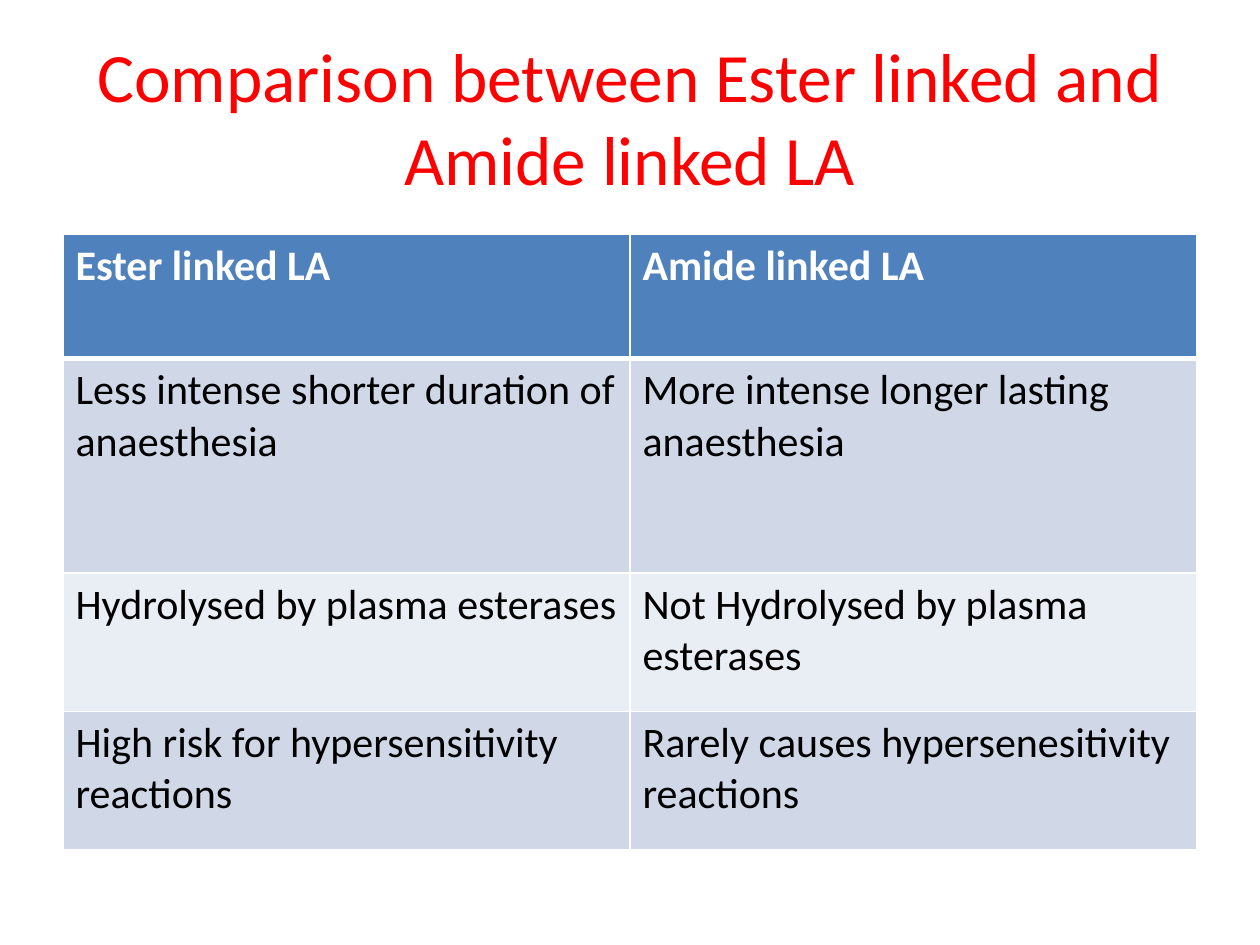
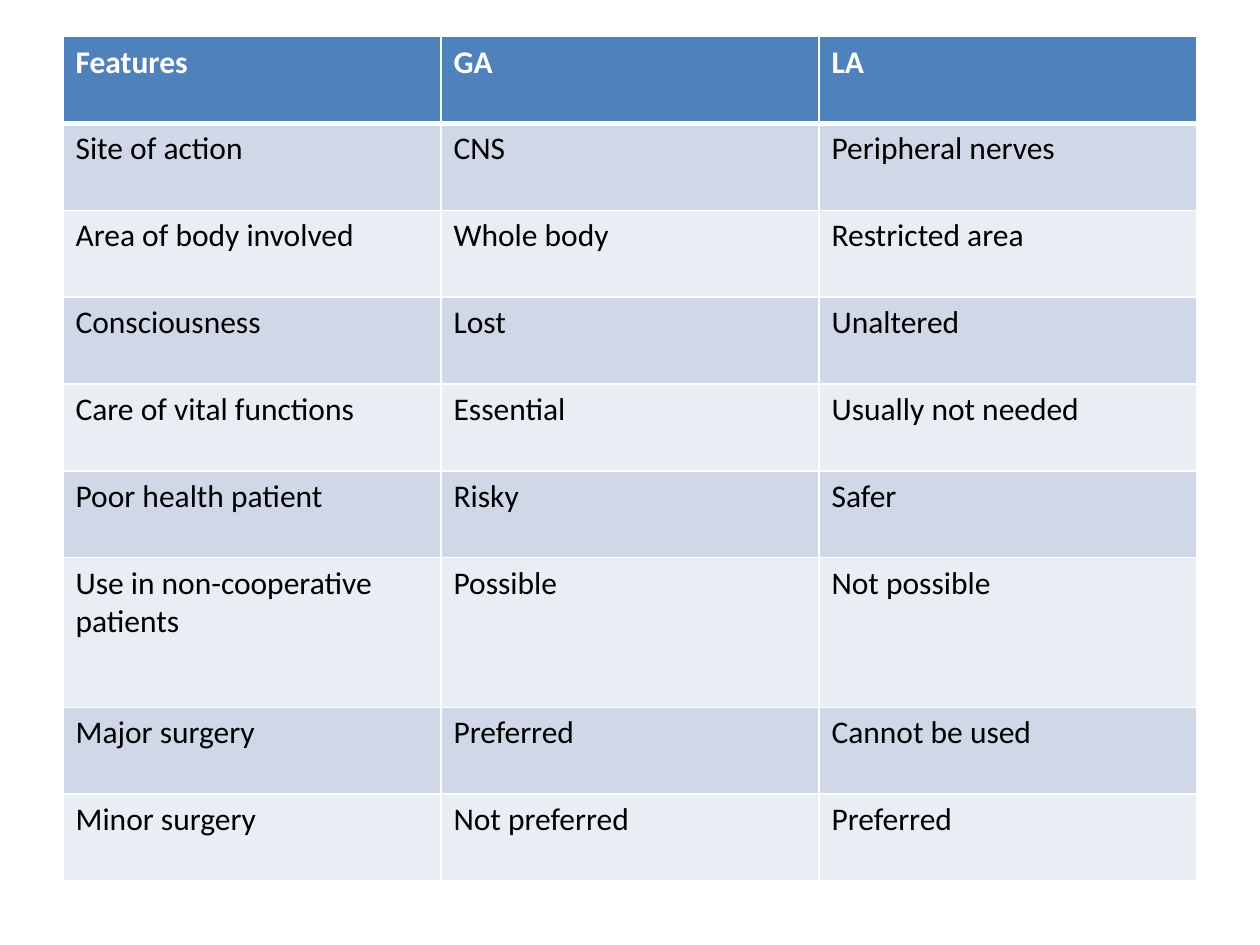
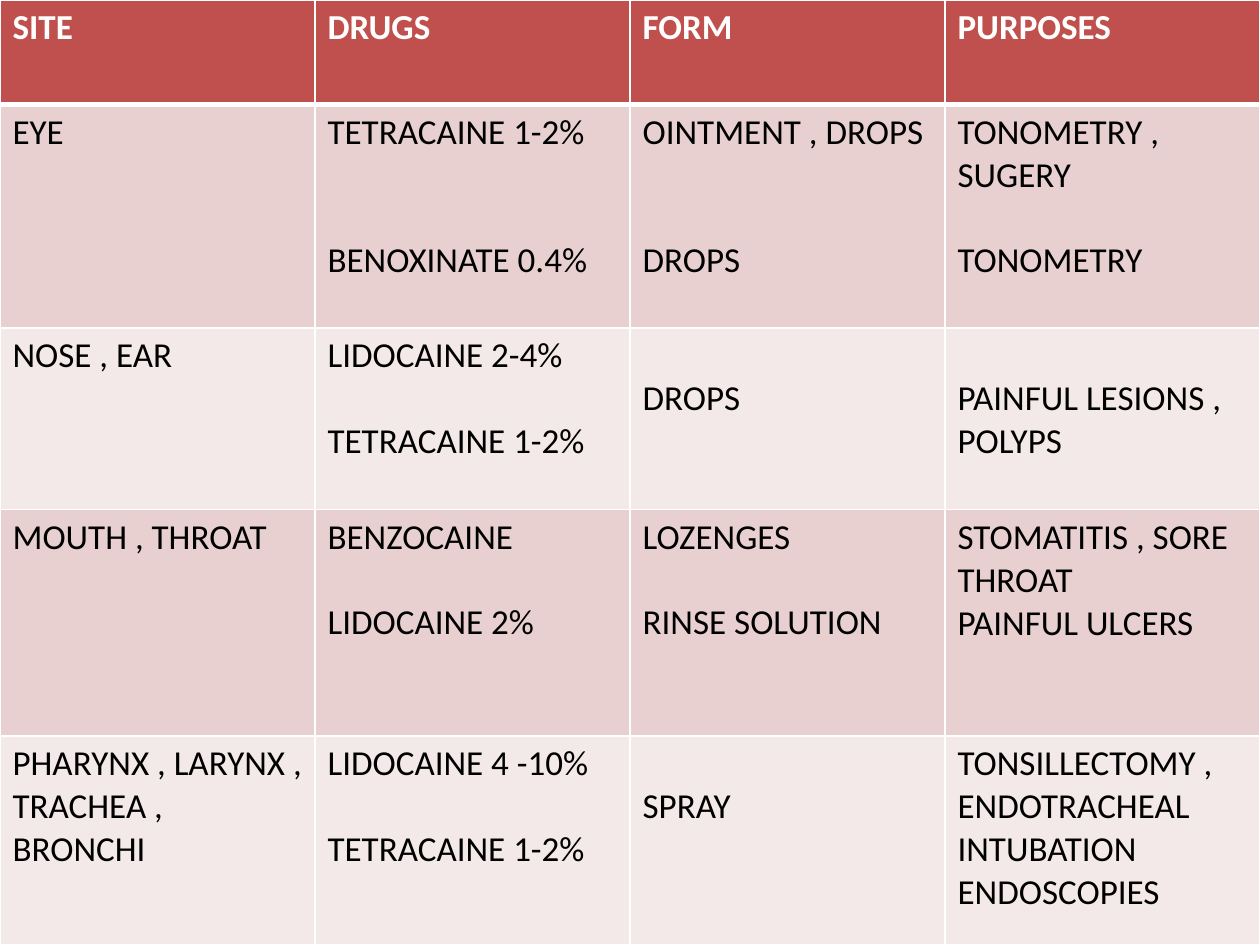
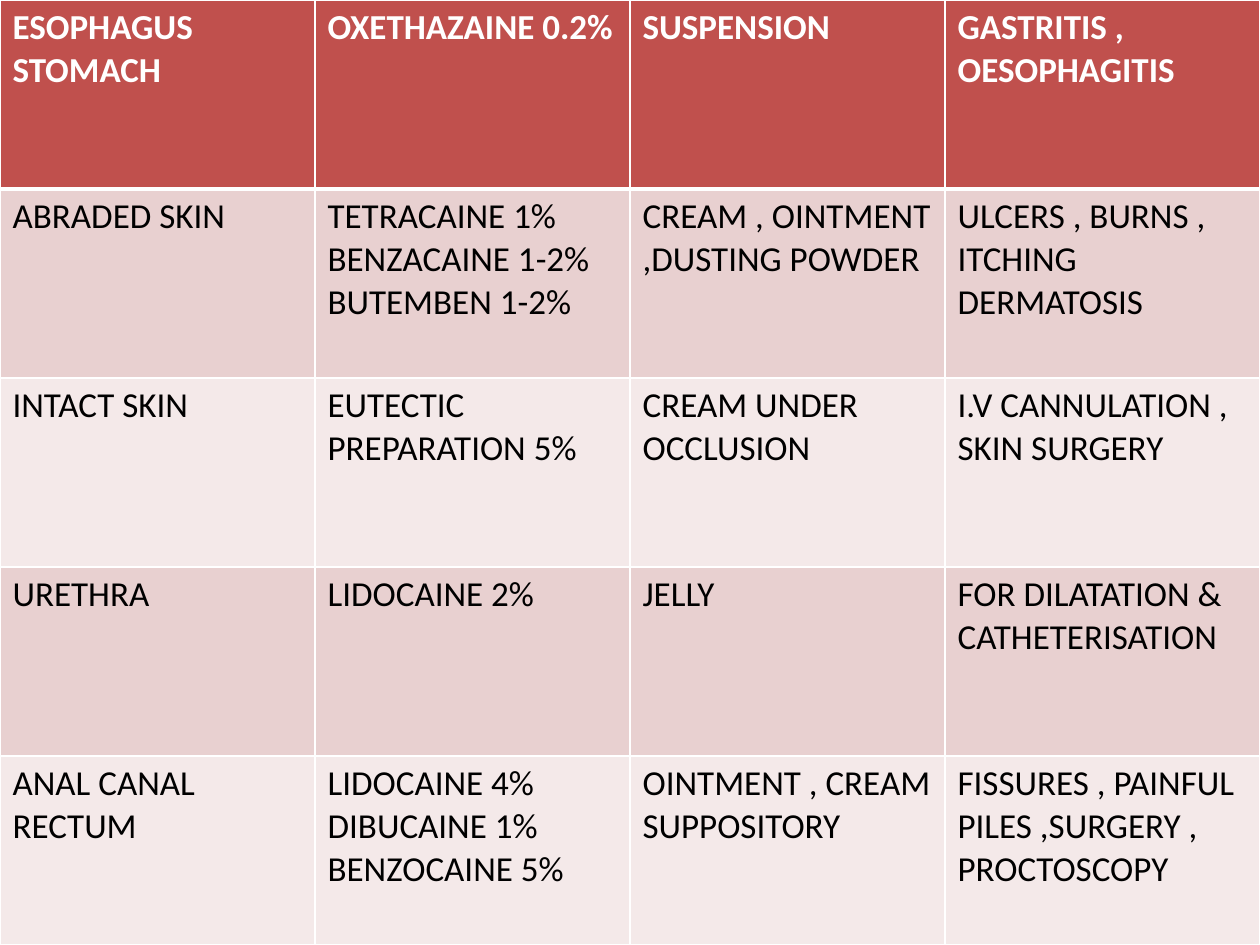
from dataclasses import dataclass
from lxml import etree
from pptx import Presentation
from pptx.dml.color import RGBColor
from pptx.enum.text import MSO_ANCHOR, PP_ALIGN
from pptx.oxml.ns import qn
from pptx.util import Cm, Pt

MID, TOP, CENTER = MSO_ANCHOR.MIDDLE, MSO_ANCHOR.TOP, PP_ALIGN.CENTER

# Content: a cell is a text or a list of lines; a number skips that many lines
TITLE = "Comparison between Ester linked and Amide linked LA"

LINKS = [
    ("Ester linked LA", "Amide linked LA"),
    ("Less intense shorter duration of anaesthesia",
     "More intense longer lasting anaesthesia"),
    ("Hydrolysed by plasma esterases", "Not Hydrolysed by plasma esterases"),
    ("High risk for hypersensitivity reactions",
     "Rarely causes hypersenesitivity reactions"),
]

TRAITS = [
    ("Features", "GA", "LA"),
    ("Site of action", "CNS", "Peripheral nerves"),
    ("Area of body involved", "Whole body", "Restricted area"),
    ("Consciousness", "Lost", "Unaltered"),
    ("Care of vital functions", "Essential", "Usually not needed"),
    ("Poor health patient", "Risky", "Safer"),
    ("Use in non-cooperative patients", "Possible", "Not possible"),
    ("Major surgery", "Preferred", "Cannot be used"),
    ("Minor surgery", "Not preferred", "Preferred"),
]

SITES = [
    ("SITE", "DRUGS", "FORM", "PURPOSES"),
    ("EYE", ["TETRACAINE 1-2%", 2, "BENOXINATE 0.4%"],
     ["OINTMENT , DROPS", 2, "DROPS"],
     ["TONOMETRY , SUGERY", 1, "TONOMETRY"]),
    ("NOSE , EAR", ["LIDOCAINE 2-4%", 1, "TETRACAINE 1-2%"],
     [1, "DROPS"], [1, "PAINFUL LESIONS , POLYPS"]),
    ("MOUTH , THROAT", ["BENZOCAINE", 1, "LIDOCAINE 2%"],
     ["LOZENGES", 1, "RINSE SOLUTION"],
     ["STOMATITIS , SORE THROAT", "PAINFUL ULCERS"]),
    ("PHARYNX , LARYNX , TRACHEA , BRONCHI",
     ["LIDOCAINE 4 -10%", 1, "TETRACAINE 1-2%"], [1, "SPRAY"],
     "TONSILLECTOMY , ENDOTRACHEAL INTUBATION ENDOSCOPIES"),
]

MORE = [
    (["ESOPHAGUS", "STOMACH"], "OXETHAZAINE 0.2%", "SUSPENSION",
     "GASTRITIS , OESOPHAGITIS"),
    ("ABRADED SKIN",
     ["TETRACAINE 1%", "BENZACAINE 1-2%", "BUTEMBEN 1-2%"],
     "CREAM , OINTMENT ,DUSTING POWDER",
     "ULCERS , BURNS , ITCHING DERMATOSIS"),
    ("INTACT SKIN", "EUTECTIC PREPARATION 5%", "CREAM UNDER OCCLUSION",
     "I.V CANNULATION , SKIN SURGERY"),
    ("URETHRA", "LIDOCAINE 2%", "JELLY", "FOR DILATATION & CATHETERISATION"),
    (["ANAL CANAL", "RECTUM"],
     ["LIDOCAINE 4%", "DIBUCAINE 1%", "BENZOCAINE 5%"],
     "OINTMENT , CREAM SUPPOSITORY",
     "FISSURES , PAINFUL PILES ,SURGERY , PROCTOSCOPY"),
]


@dataclass(frozen=True)
class Theme:
    font: str = "Calibri"
    title: str = "FF0000"
    ink: str = "000000"
    white: str = "FFFFFF"
    blue: tuple = ("4F81BD", "D0D8E8", "E9EDF4")  # head, odd, even rows
    red: tuple = ("C0504D", "E8D0D0", "F4E9E9")
    big: float = 39.6
    large: int = 24
    mid: int = 20
    small: int = 18
    thin: int = 1
    thick: int = 3


LOOK = Theme()
WIDE, HIGH = 25.4, 19.05
EDGE = 1.27
PAD = 0.13
LEAD = 1.22  # line height per point of type

# Rows, left edge, top, row heights, palette, type size
TABLES = [
    (LINKS, EDGE, 4.72, [2.51, 4.32, 2.79, 2.79], LOOK.blue, LOOK.large),
    (TRAITS, EDGE, 0.74, [1.75] * 6 + [3.02] + [1.75] * 2, LOOK.blue,
     LOOK.small),
    (SITES, 0, 0, [2.11, 4.5, 3.66, 4.57, 4.21], LOOK.red, LOOK.mid),
    (MORE, 0, 0, [HIGH / len(MORE)] * len(MORE), LOOK.red, LOOK.mid),
]


def add_run(para, text, size, tint, bold=False):
    run = para.add_run()
    run.text = text
    font = run.font
    font.name, font.size, font.bold = LOOK.font, Pt(size), bold
    font.color.rgb = RGBColor.from_string(tint)


def add_title(slide):
    box = slide.shapes.add_textbox(Cm(EDGE), Cm(0.76), Cm(WIDE - 2 * EDGE),
                                   Cm(3.18))
    frame = box.text_frame
    frame.word_wrap, frame.vertical_anchor = True, MID
    para = frame.paragraphs[0]
    para.alignment = CENTER
    add_run(para, TITLE, LOOK.big, LOOK.title)


def add_rules(cell, top, bottom):
    props = cell._tc.get_or_add_tcPr()
    sides = {"L": LOOK.thin, "R": LOOK.thin, "T": top, "B": bottom}
    for side, width in sides.items():
        line = etree.SubElement(props, qn(f"a:ln{side}"), w=str(Pt(width)))
        fill = etree.SubElement(line, qn("a:solidFill"))
        etree.SubElement(fill, qn("a:srgbClr"), val=LOOK.white)


def fill_cell(cell, lines, size, tint, bold):
    if isinstance(lines, str):
        lines = [lines]
    cell.vertical_anchor = TOP
    frame, gap, first = cell.text_frame, 0, True
    for item in lines:
        if isinstance(item, int):
            gap = item * size * LEAD
            continue
        if first:
            para = frame.paragraphs[0]
            cell.margin_top = Cm(PAD) + Pt(gap)
        else:
            para = frame.add_paragraph()
            para.space_before = Pt(gap)
        add_run(para, item, size, tint, bold)
        gap, first = 0, False


def add_grid(slide, rows, left, top, highs, tones, size):
    cols = len(rows[0])
    span = WIDE - 2 * left
    table = slide.shapes.add_table(len(rows), cols, Cm(left), Cm(top),
                                   Cm(span), Cm(sum(highs))).table
    table.horz_banding = False
    for col in table.columns:
        col.width = Cm(span / cols)
    head, odd, even = tones
    for r, (row, high) in enumerate(zip(rows, highs)):
        table.rows[r].height = Cm(high)
        is_head = r == 0
        tone = head if is_head else odd if r % 2 else even
        for c, lines in enumerate(row):
            cell = table.cell(r, c)
            # The heavy rule lies between the head and the first body row
            add_rules(cell, LOOK.thick if r == 1 else LOOK.thin,
                      LOOK.thick if is_head else LOOK.thin)
            cell.fill.solid()
            cell.fill.fore_color.rgb = RGBColor.from_string(tone)
            fill_cell(cell, lines, size,
                      LOOK.white if is_head else LOOK.ink, is_head)


def main():
    deck = Presentation()
    deck.slide_width, deck.slide_height = Cm(WIDE), Cm(HIGH)
    blank = deck.slide_layouts[6]
    for num, spot in enumerate(TABLES):
        slide = deck.slides.add_slide(blank)
        if num == 0:
            add_title(slide)
        add_grid(slide, *spot)
    deck.save("out.pptx")


if __name__ == "__main__":
    main()
